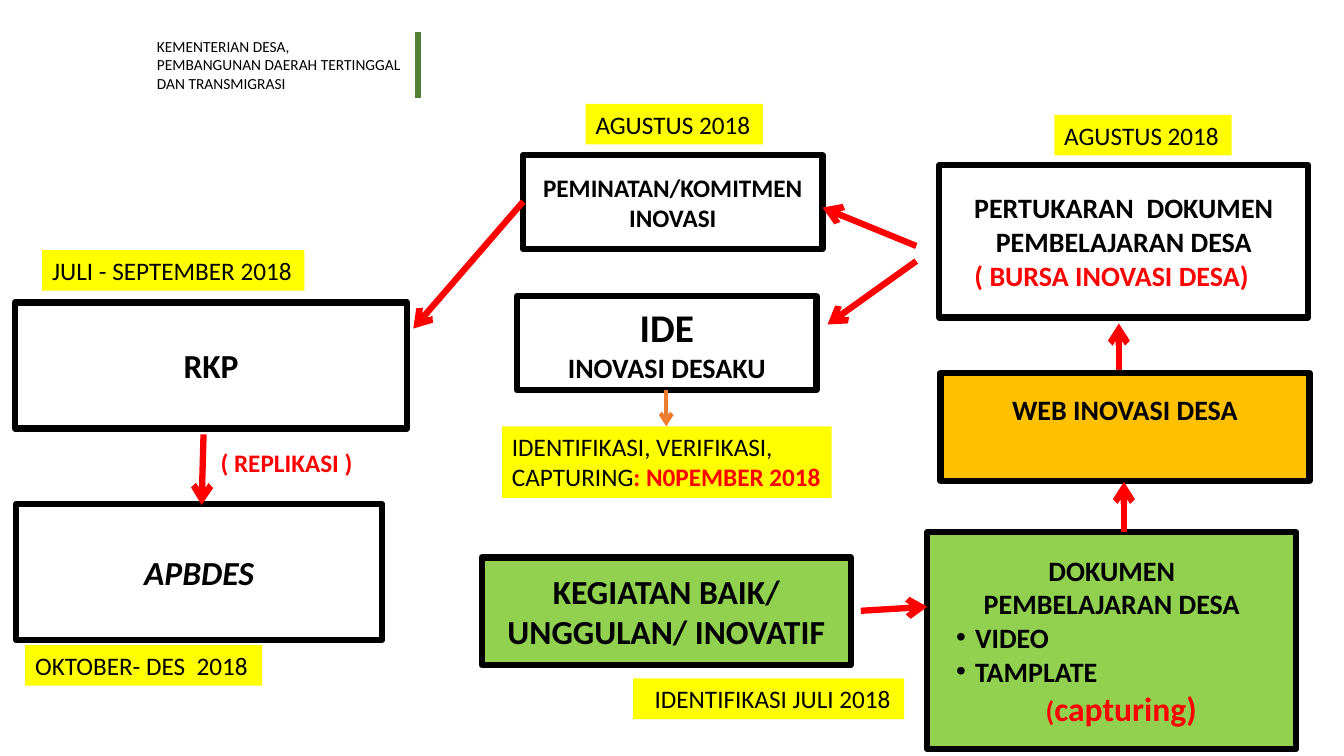
from pptx import Presentation
from pptx import util as u
from pptx.dml import color
from pptx.enum import shapes, text
from pptx.oxml import ns
from lxml import etree

BLACK, RED, GREEN, YELLOW = "000000", "FF0000", "92D050", "FFFF00"
CENTER = text.PP_ALIGN.CENTER
LEFT = text.PP_ALIGN.LEFT


def rgb(code):
    return color.RGBColor.from_string(code)


def child(parent, tag, **attrs):
    return etree.SubElement(parent, ns.qn(tag), **attrs)


def write(frame, lines, size=20, bold=True, italic=False, tint=BLACK, align=CENTER):
    for i, line in enumerate(lines):
        if isinstance(line, str):
            line = dict(runs=[(line, {})])
        para = frame.paragraphs[0] if i == 0 else frame.add_paragraph()
        para.alignment = line.get("align", align)
        props = para._p.get_or_add_pPr()
        if "left" in line:
            props.set("marL", str(u.Pt(line["left"])))
        if line.get("dot"):
            props.set("indent", str(u.Pt(-13.5)))
            child(props, "a:buFont", typeface="Arial")
            child(props, "a:buChar", char="•")
        for words, own in line["runs"]:
            run = para.add_run()
            run.text = words
            font = run.font
            font.name = "Calibri"
            font.size = u.Pt(own.get("size", size))
            font.bold = own.get("bold", bold)
            font.italic = italic
            font.color.rgb = rgb(own.get("tint", tint))


class Board:
    edge = 4.5
    inset = 7.2

    def __init__(self, slide):
        self.items = slide.shapes

    def box(self, x, y, w, h, lines, fill="FFFFFF", foot=3.6, **style):
        shape = self.items.add_shape(shapes.MSO_SHAPE.RECTANGLE, *map(u.Pt, (x, y, w, h)))
        shape.shadow.inherit = False
        shape.fill.solid()
        shape.fill.fore_color.rgb = rgb(fill)
        shape.line.color.rgb = rgb(BLACK)
        shape.line.width = u.Pt(self.edge)
        frame = shape.text_frame
        frame.word_wrap = True
        frame.vertical_anchor = text.MSO_ANCHOR.MIDDLE
        frame.margin_bottom = u.Pt(foot)
        write(frame, lines, **style)

    def label(self, x, y, w, h, lines, fill=None, wrap=False, left=inset,
              size=18, bold=False, tint=BLACK):
        shape = self.items.add_textbox(*map(u.Pt, (x, y, w, h)))
        if fill:
            shape.fill.solid()
            shape.fill.fore_color.rgb = rgb(fill)
        frame = shape.text_frame
        frame.word_wrap = wrap
        frame.margin_left = u.Pt(left)
        write(frame, lines, size=size, bold=bold, tint=tint, align=LEFT)

    def line(self, x1, y1, x2, y2, tint=RED, width=edge, head=True):
        link = self.items.add_connector(
            shapes.MSO_CONNECTOR.STRAIGHT, *map(u.Pt, (x1, y1, x2, y2)))
        link.line.color.rgb = rgb(tint)
        link.line.width = u.Pt(width)
        if head:
            child(link.line._get_or_add_ln(), "a:tailEnd", type="arrow")
        child(link._element.spPr, "a:effectLst")


def main():
    deck = Presentation()
    deck.slide_width, deck.slide_height = u.Pt(960), u.Pt(540)
    board = Board(deck.slides.add_slide(deck.slide_layouts[6]))

    board.label(105, 23, 193, 47.5, [
        "KEMENTERIAN DESA,",
        "PEMBANGUNAN DAERAH TERTINGGAL DAN TRANSMIGRASI",
    ], wrap=True, size=11)
    board.line(298.8, 23, 298.8, 70, tint="548235", head=False)

    board.box(10.8, 216, 280, 90, ["RKP"], size=24)
    board.box(11.5, 360, 261.4, 97.2, ["APBDES"], size=24, italic=True)
    board.box(344.2, 398.2, 263.5, 77, ["KEGIATAN BAIK/ UNGGULAN/ INOVATIF"],
              fill=GREEN, size=24)
    board.box(662.4, 380.2, 263.5, 154.8, [
        "DOKUMEN",
        "PEMBELAJARAN DESA",
        dict(runs=[("VIDEO", {})], align=LEFT, left=27, dot=True),
        dict(runs=[("TAMPLATE", {})], align=LEFT, left=27, dot=True),
        dict(runs=[("(", {"tint": RED}), ("capturing)", {"tint": RED, "size": 24})],
             left=13.5),
    ], fill=GREEN)
    board.box(671, 118, 263.5, 108.7, [
        "PERTUKARAN  DOKUMEN",
        "PEMBELAJARAN DESA",
        dict(runs=[("( BURSA INOVASI DESA)", {"tint": RED})], align=LEFT, left=18),
    ])
    board.box(373.7, 110.9, 213.8, 67, ["PEMINATAN/KOMITMEN INOVASI"], size=18)
    board.box(369.4, 211.7, 213.8, 67, [
        dict(runs=[("IDE", {"size": 28})]), "INOVASI DESAKU"])

    for ends in (
        (145.4, 310.3, 144, 360.7),
        (614.9, 436.3, 662.4, 433.4),
        (799.2, 291.6, 799.2, 231.1),
        (654.5, 175.7, 587.5, 148.3),
        (654.5, 186.5, 591.1, 231.8),
        (373.7, 144, 295.2, 234.7),
    ):
        board.line(*ends)

    for x, y, w, words in (
        (753.1, 82.1, 126.7, "AGUSTUS 2018"),
        (30.2, 178.6, 187.2, "JULI - SEPTEMBER 2018"),
        (18, 460.8, 169.2, "OKTOBER- DES  2018"),
        (418.3, 74.2, 126.7, "AGUSTUS 2018"),
    ):
        board.label(x, y, w, 29, [words], fill=YELLOW)
    board.label(452.2, 484.6, 193.7, 29, ["IDENTIFIKASI JULI 2018"], fill=YELLOW, left=15.4)
    board.label(358.6, 304.6, 235.4, 51, [
        "IDENTIFIKASI, VERIFIKASI,",
        dict(runs=[("CAPTURING", {}), (": N0PEMBER 2018", {"tint": RED, "bold": True})]),
    ], fill=YELLOW)

    board.box(671.8, 266.4, 263.5, 77, ["WEB INOVASI DESA"], fill="FFC000", foot=28)
    board.line(802.8, 380.2, 802.8, 344.2)
    board.line(475.9, 278.6, 475.9, 304.6, tint="ED7D31", width=3)
    board.label(150.5, 316.1, 110.2, 29, ["( REPLIKASI )"], bold=True, tint=RED)

    deck.save("out.pptx")


if __name__ == "__main__":
    main()
